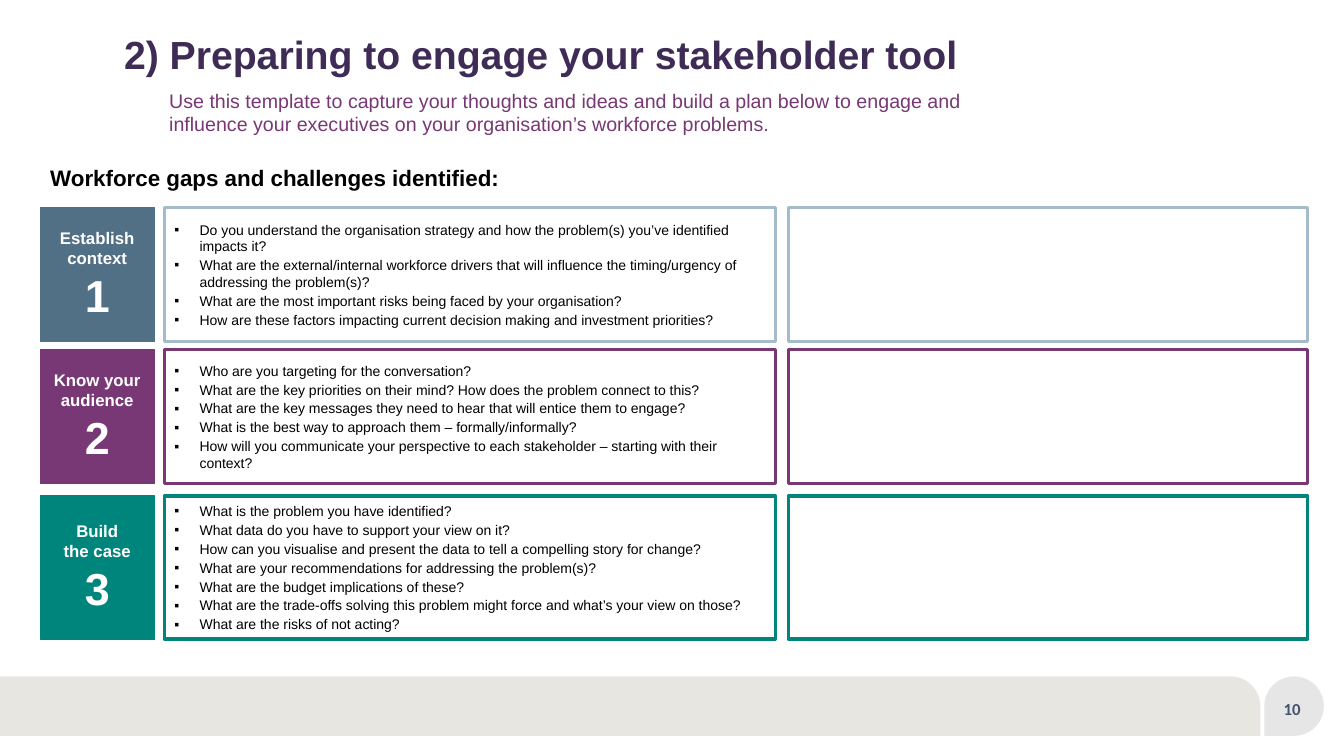
from lxml import etree
from pptx import Presentation
from pptx.dml.color import RGBColor
from pptx.enum.shapes import MSO_SHAPE
from pptx.enum.text import MSO_ANCHOR, MSO_AUTO_SIZE, PP_ALIGN
from pptx.oxml.ns import qn
from pptx.util import Pt

RECTANGLE = MSO_SHAPE.RECTANGLE
ROUND_CORNER = MSO_SHAPE.ROUND_1_RECTANGLE
TEARDROP = MSO_SHAPE.TEAR
TOP, MIDDLE = MSO_ANCHOR.TOP, MSO_ANCHOR.MIDDLE
LEFT, CENTER = PP_ALIGN.LEFT, PP_ALIGN.CENTER
NO_AUTOFIT = MSO_AUTO_SIZE.NONE

INK = RGBColor(0x3E, 0x2C, 0x56)
PLUM = RGBColor(0x78, 0x38, 0x75)
SLATE = RGBColor(0x51, 0x70, 0x85)
MIST = RGBColor(0xA6, 0xBB, 0xC9)
TEAL = RGBColor(0x00, 0x85, 0x7C)
SAND = RGBColor(0xE8, 0xE6, 0xE1)
PEARL = RGBColor(0xE7, 0xE6, 0xE6)
NAVY = RGBColor(0x44, 0x54, 0x6A)
BLACK = RGBColor(0, 0, 0)
WHITE = RGBColor(255, 255, 255)

PX = 9144
COMPARISON_LAYOUT = 4
LABEL_X, LIST_X, NOTES_X = 40, 163, 782
LABEL_WIDTH, LIST_WIDTH, NOTES_WIDTH = 113, 606, 515

STEPS = [
    (206, 133, SLATE, MIST, 5, "Establish context", [
        "Do you understand the organisation strategy and how the problem(s) you’ve identified impacts it?",
        "What are the external/internal workforce drivers that will influence the timing/urgency of addressing the problem(s)?",
        "What are the most important risks being faced by your organisation?",
        "How are these factors impacting current decision making and investment priorities?",
    ]),
    (347, 133, PLUM, PLUM, 3, "Know your audience", [
        "Who are you targeting for the conversation?",
        "What are the key priorities on their mind? How does the problem connect to this?",
        "What are the key messages they need to hear that will entice them to engage?",
        "What is the best way to approach them – formally/informally?",
        "How will you communicate your perspective to each stakeholder – starting with their context?",
    ]),
    (492, 142, TEAL, TEAL, 3, "Build\nthe case", [
        "What is the problem you have identified?",
        "What data do you have to support your view on it?",
        "How can you visualise and present the data to tell a compelling story for change?",
        "What are your recommendations for addressing the problem(s)?",
        "What are the budget implications of these?",
        "What are the trade-offs solving this problem might force and what’s your view on those?",
        "What are the risks of not acting?",
    ]),
]


class Page:
    """Holds the slide, its pixel scale and its text style."""

    def __init__(self, slide, font="Arial"):
        self.slide = slide
        self.font = font

    def place(self, box, x, y, width, height):
        box.left, box.top = x * PX, y * PX
        box.width, box.height = width * PX, height * PX

    def frame(self, box, anchor, insets):
        frame = box.text_frame
        frame.word_wrap = True
        frame.auto_size = NO_AUTOFIT
        frame.vertical_anchor = anchor
        (frame.margin_left, frame.margin_top,
         frame.margin_right, frame.margin_bottom) = [inset * PX for inset in insets]
        return frame

    def add_words(self, para, text, size, color, bold=False, align=LEFT, spacing=1.0, font=None):
        para.alignment = align
        para.line_spacing = spacing
        para.space_before = Pt(0)
        for number, line in enumerate(text.split("\n")):
            if number:
                para.add_line_break()
            span = para.add_run()
            span.text = line
            span.font.name = font or self.font
            span.font.size = Pt(size)
            span.font.bold = bold
            span.font.color.rgb = color

    def title(self, text, x, y, width, height):
        box = self.slide.shapes.title
        self.place(box, x, y, width, height)
        frame = self.frame(box, TOP, (0, 0, 0, 0))
        self.add_words(frame.paragraphs[0], text, 28, INK, bold=True, spacing=0.9)

    def text(self, text, x, y, width, height, size, color,
             anchor=TOP, insets=(10, 5, 10, 5), **style):
        box = self.slide.shapes.add_textbox(x * PX, y * PX, width * PX, height * PX)
        frame = self.frame(box, anchor, insets)
        self.add_words(frame.paragraphs[0], text, size, color, **style)

    def shape(self, kind, x, y, width, height, fill=None, line=None, weight=2.25):
        box = self.slide.shapes.add_shape(kind, x * PX, y * PX, width * PX, height * PX)
        box.shadow.inherit = False
        if fill is None:
            box.fill.background()
        else:
            box.fill.solid()
            box.fill.fore_color.rgb = fill
        if line is None:
            box.line.fill.background()
        else:
            box.line.color.rgb = line
            box.line.width = Pt(weight)
        return box

    def label(self, name, number, x, y, width, height, color):
        box = self.shape(RECTANGLE, x, y, width, height, color, color, 0.75)
        frame = self.frame(box, MIDDLE, (0, 0, 0, 0))
        self.add_words(frame.paragraphs[0], name, 12, WHITE, bold=True, align=CENTER)
        self.add_words(frame.add_paragraph(), str(number), 32, WHITE, bold=True, align=CENTER)

    def bullets(self, index, items, x, y, width, height, color, inset):
        box = self.slide.placeholders[index]
        self.place(box, x, y, width, height)
        box.line.color.rgb = color
        box.line.width = Pt(2.25)
        frame = self.frame(box, MIDDLE, (10, inset, 5, inset))
        for number, item in enumerate(items):
            para = frame.add_paragraph() if number else frame.paragraphs[0]
            properties = para._p.get_or_add_pPr()
            properties.set("marL", str(25 * PX))
            properties.set("indent", str(-25 * PX))
            etree.SubElement(properties, qn("a:buChar")).set("char", "▪")
            self.add_words(para, item, 10, BLACK)
            if number:
                para.space_before = Pt(1.5)

    def remove_placeholder(self, index):
        element = self.slide.placeholders[index].element
        element.getparent().remove(element)


def main():
    deck = Presentation()
    deck.slide_width, deck.slide_height = 1333 * PX, 750 * PX
    page = Page(deck.slides.add_slide(deck.slide_layouts[COMPARISON_LAYOUT]))
    page.remove_placeholder(4)

    footer = page.shape(ROUND_CORNER, 0, 671, 1250, 59, SAND)
    footer.adjustments[0] = 0.5

    page.title("2) Preparing to engage your stakeholder tool", 123, 35, 1098, 45)
    page.text("Use this template to capture your thoughts and ideas and build a plan below "
              "to engage and influence your executives on your organisation’s workforce problems.",
              158, 83, 883, 57, 14, PLUM)
    page.text("Workforce gaps and challenges identified:",
              40, 156, 1257, 41, 16, BLACK, anchor=MIDDLE, bold=True)

    for number, (y, height, color, border, inset, name, questions) in enumerate(STEPS, 1):
        page.label(name, number, LABEL_X, y, LABEL_WIDTH, height, color)
        page.bullets(number, questions, LIST_X, y, LIST_WIDTH, height, border, inset)
        page.shape(RECTANGLE, NOTES_X, y, NOTES_WIDTH, height, line=border)

    badge = page.shape(TEARDROP, 1254, 671, 59, 59, PEARL)
    badge.rotation = 180
    page.text("10", 1254, 671, 59, 59, 12, NAVY, anchor=MIDDLE, insets=(6, 10, 10, 5),
              bold=True, align=CENTER, font="Calibri")

    deck.save("out.pptx")


if __name__ == "__main__":
    main()
